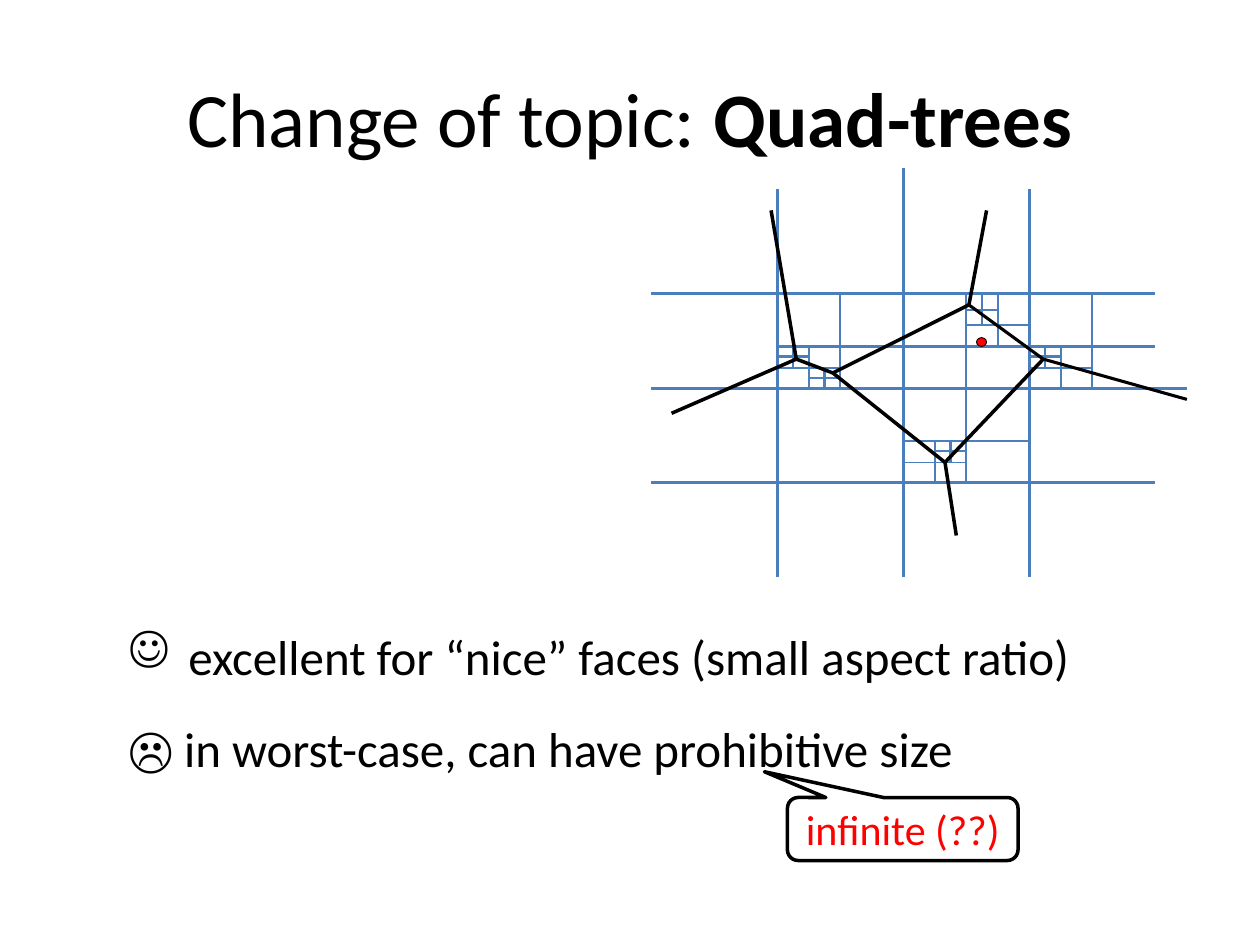
"""Build the slide that introduces quad-trees over a planar subdivision."""
import lxml.etree
import pptx
import pptx.dml.color
import pptx.enum.shapes
import pptx.enum.text
import pptx.oxml.ns
import pptx.util

Inches = pptx.util.Inches
Pt = pptx.util.Pt
RGBColor = pptx.dml.color.RGBColor
Shape = pptx.enum.shapes.MSO_SHAPE
Align = pptx.enum.text.PP_ALIGN
Anchor = pptx.enum.text.MSO_ANCHOR
qn = pptx.oxml.ns.qn

BLACK = RGBColor(0x00, 0x00, 0x00)
WHITE = RGBColor(0xFF, 0xFF, 0xFF)
RED = RGBColor(0xFF, 0x00, 0x00)
BLUE = RGBColor(0x4B, 0x7E, 0xBC)

ROOT_LINES = [((5.17, 3.08), (9.42, 3.08)), ((7.17, 1.33), (7.17, 4.58))]

# Each level: cell width, row line width, column line width,
# cells as (left, top, bottom, split height).
LEVELS = [
    (2, 1.5, 1.5, [(5.17, 1.5, 3.08, 2.33), (7.17, 1.5, 3.08, 2.33),
                   (5.17, 3.08, 4.58, 3.83), (7.17, 3.08, 4.58, 3.83)]),
    (1, 1.25, 1.25, [(6.17, 2.33, 3.08, 2.75), (7.17, 2.33, 3.08, 2.75),
                     (7.17, 3.08, 3.83, 3.5)]),
    (1, 2, 1.25, [(8.17, 2.33, 3.08, 2.75)]),
    (0.5, 1, 0.75, [(6.17, 2.75, 3.08, 2.92), (7.17, 3.5, 3.83, 3.67),
                    (7.67, 2.33, 2.75, 2.58), (8.17, 2.75, 3.08, 2.92)]),
    (0.25, 1.5, 1.5, [(6.17, 2.75, 2.92, 2.83), (6.42, 2.92, 3.08, 3),
                      (7.42, 3.5, 3.67, 3.58), (7.67, 2.33, 2.58, 2.46),
                      (8.17, 2.75, 2.92, 2.83)]),
]

TOP, RIGHT, BOTTOM = (7.69, 2.42), (8.28, 2.85), (7.5, 3.67)
INNER, LEFT = (6.61, 2.96), (6.32, 2.85)
EDGES = [
    ((7.83, 1.67), TOP, 2), (TOP, INNER, 2), (LEFT, (6.12, 1.67), 2),
    (LEFT, (5.33, 3.28), 2), (INNER, BOTTOM, 2), (RIGHT, BOTTOM, 2),
    (BOTTOM, (7.59, 4.25), 2), (RIGHT, (9.42, 3.17), 1.75),
    (INNER, LEFT, 2), (TOP, RIGHT, 1.75),
]


def apply_format(target, values):
    """Set every attribute named in values on target."""
    for name, value in values.items():
        setattr(target, name, value)


def add_span(para, text, size, color=BLACK, bold=False):
    """Add one formatted run to a paragraph."""
    span = para.add_run()
    span.text = text
    apply_format(span.font, {"name": "Calibri", "size": Pt(size), "bold": bold})
    span.font.color.rgb = color


def add_line(page, start, end, color, width):
    """Draw a straight line without a shadow."""
    ends = [Inches(value) for value in (*start, *end)]
    line = page.shapes.add_connector(pptx.enum.shapes.MSO_CONNECTOR.STRAIGHT, *ends)
    line.line.color.rgb = color
    line.line.width = Pt(width)
    lxml.etree.SubElement(line._element.spPr, qn("a:effectLst"))


def add_outlined(page, kind, frame, fill, width):
    """Draw a filled preset shape with a black outline."""
    shape = page.shapes.add_shape(kind, *[Inches(value) for value in frame])
    shape.shadow.inherit = False
    shape.fill.solid()
    shape.fill.fore_color.rgb = fill
    shape.line.color.rgb = BLACK
    shape.line.width = Pt(width)
    return shape


def add_title(page):
    """Place and fill the title placeholder."""
    title = page.shapes.title
    apply_format(title, {"left": Inches(0.5), "top": Inches(0.3),
                         "width": Inches(9), "height": Inches(1.25)})
    title.text_frame.vertical_anchor = Anchor.MIDDLE
    para = title.text_frame.paragraphs[0]
    para.alignment = Align.CENTER
    add_span(para, "Change of topic: ", 44)
    add_span(para, "Quad-trees", 44, bold=True)


def add_quadtree(page):
    """Draw the root split and the cross inside every divided cell."""
    for start, end in ROOT_LINES:
        add_line(page, start, end, BLUE, 1.75)
    for size, row_width, column_width, cells in LEVELS:
        for left, top, bottom, split in cells:
            middle = left + size / 2
            add_line(page, (left, split), (left + size, split), BLUE, row_width)
            add_line(page, (middle, top), (middle, bottom), BLUE, column_width)


def add_subdivision(page):
    """Draw the edges of the subdivision and the query point."""
    for start, end, width in EDGES:
        add_line(page, start, end, BLACK, width)
    add_outlined(page, Shape.FLOWCHART_CONNECTOR, (7.75, 2.68, 0.08, 0.07), RED, 0.5)


def add_verdicts(page):
    """Write the good and the bad property below the drawing."""
    frame = [Inches(value) for value in (0.92, 4.92, 8.5, 1.62)]
    box = page.shapes.add_textbox(*frame)
    box.text_frame.word_wrap = True
    good = box.text_frame.paragraphs[0]
    add_span(good, " excellent for “nice” faces (small aspect ratio)", 28)
    settings = good._p.get_or_add_pPr()
    settings.set("marL", str(Inches(0.39)))
    settings.set("indent", str(-Inches(0.39)))
    lxml.etree.SubElement(settings, qn("a:buChar")).set("char", "☺")
    bad = box.text_frame.add_paragraph()
    bad.space_before = Pt(19)
    add_span(bad, "☹ in worst-case, can have prohibitive size", 28)


def add_callout(page):
    """Add the speech bubble that questions the size."""
    callout = add_outlined(page, Shape.ROUNDED_RECTANGULAR_CALLOUT,
                           (6.25, 6.33, 1.83, 0.5), WHITE, 2)
    for index, value in enumerate((-0.6, -0.91, 0.17)):
        callout.adjustments[index] = value
    callout.text_frame.vertical_anchor = Anchor.MIDDLE
    para = callout.text_frame.paragraphs[0]
    para.alignment = Align.CENTER
    add_span(para, "infinite (??)", 24, RED)


def main():
    """Build and save the deck."""
    deck = pptx.Presentation()
    apply_format(deck, {"slide_width": Inches(10), "slide_height": Inches(7.5)})
    page = deck.slides.add_slide(deck.slide_layouts[5])
    add_title(page)
    add_quadtree(page)
    add_verdicts(page)
    add_subdivision(page)
    add_callout(page)
    deck.save("out.pptx")


if __name__ == "__main__":
    main()
